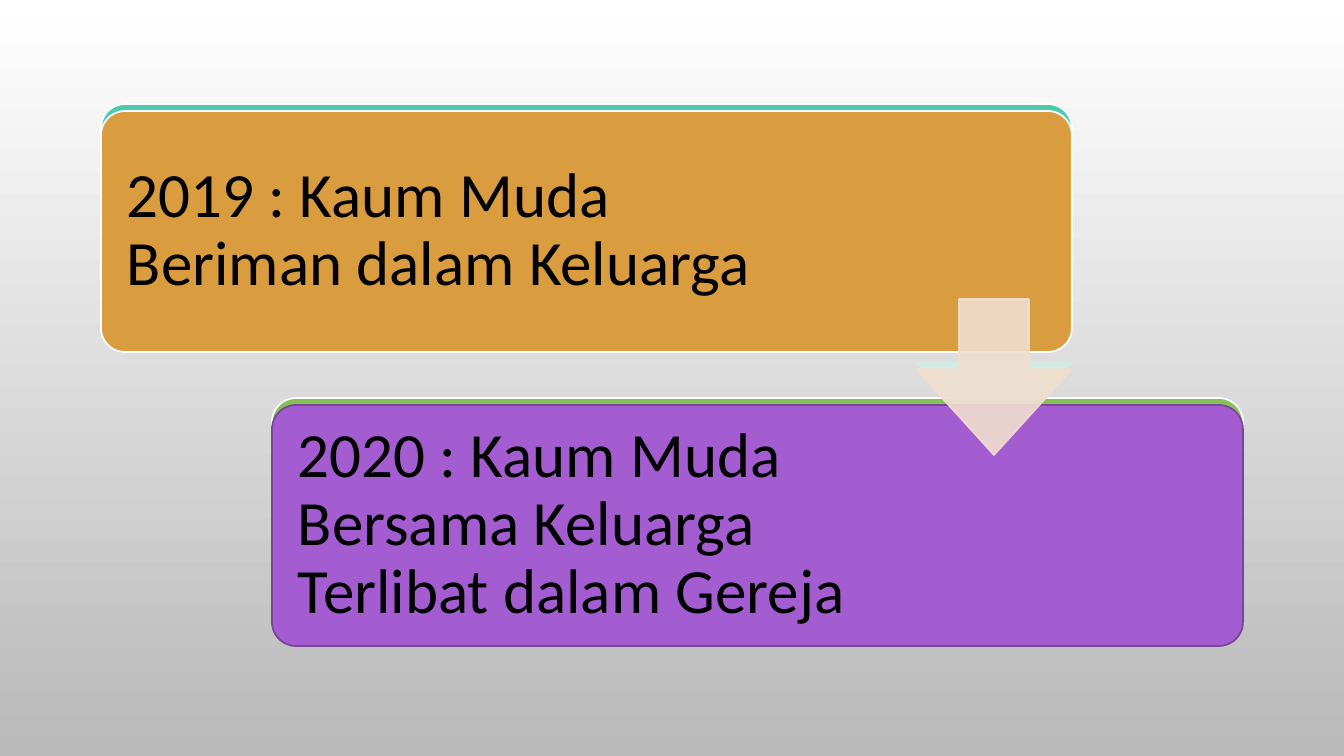
from lxml.etree import SubElement
from pptx import Presentation
from pptx.dml.color import RGBColor
from pptx.enum.shapes import MSO_SHAPE
from pptx.enum.text import MSO_ANCHOR
from pptx.oxml.ns import qn
from pptx.util import Pt

SCALE = 914400 / 100.8
LIFT = 7


def px(*sizes):
    """Turn pixel lengths into EMU."""
    return [round(size * SCALE) for size in sizes]


def paint(fill, tone, alpha=100):
    """Give a fill a solid hex colour and an opacity in percent."""
    fill.solid()
    fill.fore_color.rgb = RGBColor.from_string(tone)
    if alpha < 100:
        for node in fill._xPr.iter(qn("a:srgbClr")):
            SubElement(node, qn("a:alpha"), val=str(alpha * 1000))


def shape(slide, kind, box, tone, edge, adjust, alpha=100):
    """Draw a filled and outlined preset shape."""
    item = slide.shapes.add_shape(kind, *px(*box))
    item.shadow.inherit = False
    for spot, value in enumerate(adjust):
        item.adjustments[spot] = value
    item.line.width = Pt(1.25)
    paint(item.fill, tone, alpha)
    paint(item.line.fill, edge, alpha)


def write(slide, box, text, size=45, tone="000000", font="Calibri", inset=19):
    """Place wrapped text, centred vertically in its box."""
    frame = slide.shapes.add_textbox(*px(*box)).text_frame
    frame.word_wrap = True
    frame.vertical_anchor = MSO_ANCHOR.MIDDLE
    gap, = px(inset)
    frame.margin_left = frame.margin_right = gap
    frame.margin_top = frame.margin_bottom = gap
    para = frame.paragraphs[0]
    para.line_spacing = 0.9
    run = para.add_run()
    run.text = text
    run.font.size, run.font.name = Pt(size), font
    paint(run.font.fill, tone)


def card(slide, box, tone, edge, text="", span=0):
    """Draw a rounded card with optional text of a given width."""
    left, top, width, high = box
    shape(slide, MSO_SHAPE.ROUNDED_RECTANGLE, box, tone, edge, [0.1])
    if text:
        write(slide, (left + 7, top + 7, span, high - 14), text)


def flow(slide, box, cards, arrow):
    """Step two cards across the box, with an arrow between them."""
    left, top, width, high = box
    wide, tall, side = 971, 241, 156
    steps = [(left, top), (left + width - wide, top + high - tall)]
    for (x, y), look in zip(steps, cards):
        card(slide, (x, y, wide, tall), *look)
    spot = (left + wide - side, top + 188, side, side)
    shape(slide, MSO_SHAPE.DOWN_ARROW, spot, arrow, arrow, [0.45, 0.55], 90)


def main():
    """Build and save the slide."""
    deck = Presentation()
    deck.slide_width, deck.slide_height = px(1344, 756)
    slide = deck.slides.add_slide(deck.slide_layouts[6])
    back = slide.background.fill
    back.gradient()
    back.gradient_angle = 270
    for stop, tone in zip(back.gradient_stops, ("FFFFFF", "B9B9B9")):
        stop.color.rgb = RGBColor.from_string(tone)
    left, top, width, high = 101, 104, 1142, 535
    rear = [("4BCAAD", "FFFFFF"), ("86C157", "FFFFFF")]
    front = [
        ("D99C3F", "FFFFFF", "2019 : Kaum Muda Beriman dalam Keluarga", 723),
        ("A35DD1", "79459B",
         "2020 : Kaum Muda Bersama Keluarga Terlibat dalam Gereja", 629),
    ]
    flow(slide, (left, top, width, high), rear, "D0ECE3")
    flow(slide, (left, top + LIFT, width, high), front, "F1DECF")
    deck.save("out.pptx")


if __name__ == "__main__":
    main()
